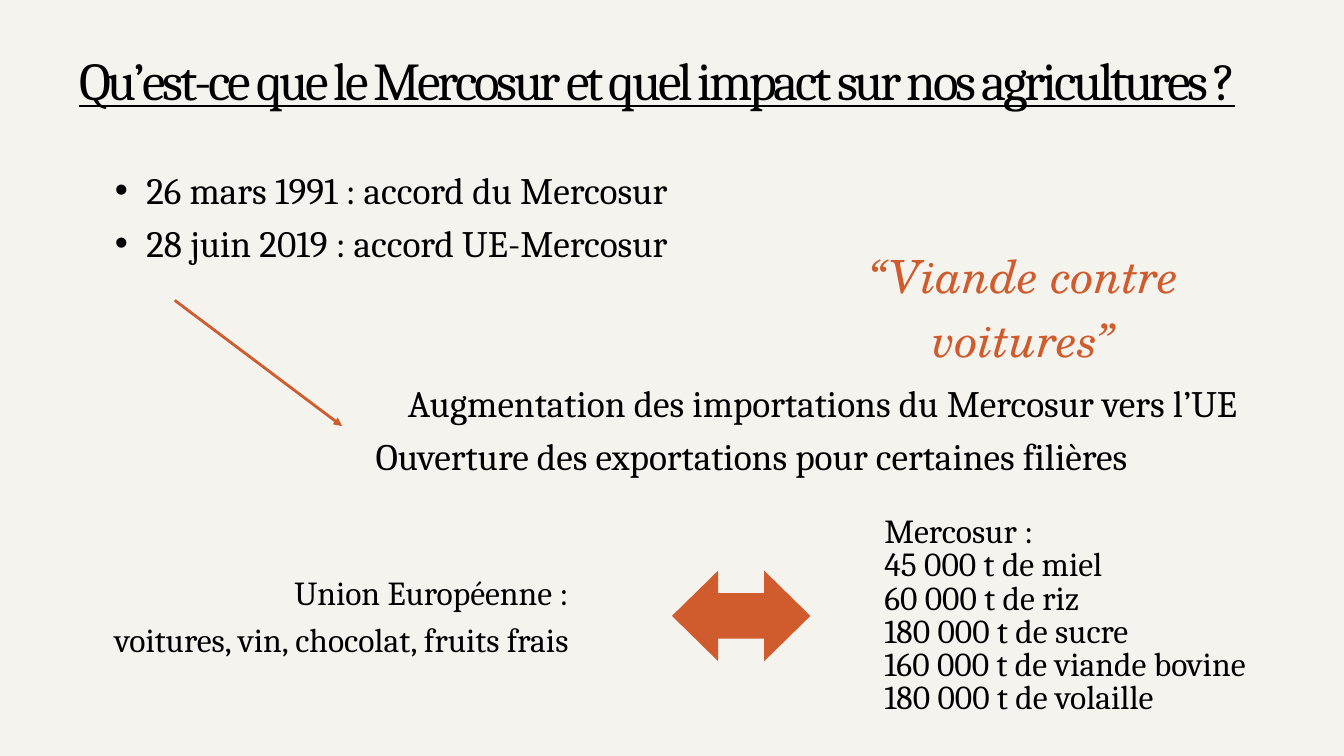
from lxml import etree
from pptx import Presentation
from pptx.dml.color import RGBColor
from pptx.enum.shapes import MSO_CONNECTOR, MSO_SHAPE
from pptx.enum.text import MSO_AUTO_SIZE, PP_ALIGN
from pptx.oxml.ns import qn
from pptx.util import Inches, Pt

WIDE, HIGH = Inches(20), Inches(11.25)
PAPER = RGBColor(0xF4, 0xF3, 0xEE)
RUST = RGBColor(0xD0, 0x5B, 0x2C)
BLACK = RGBColor(0, 0, 0)
LEFT, MID, RIGHT = PP_ALIGN.LEFT, PP_ALIGN.CENTER, PP_ALIGN.RIGHT
GROW = MSO_AUTO_SIZE.SHAPE_TO_FIT_TEXT
LINE = MSO_CONNECTOR.STRAIGHT
SWAP = MSO_SHAPE.LEFT_RIGHT_ARROW

BASE = {"name": "Cambria", "size": Pt(40)}
TITLE = {"name": "Cambria", "size": Pt(57), "underline": True}
QUOTE = {"name": "TeX Gyre Schola", "size": Pt(49), "italic": True}
SMALL = {"name": "Cambria", "size": Pt(36)}


def span(*shares):
    """Turn x, y pairs in percent of the slide into lengths."""
    return [int((HIGH if i % 2 else WIDE) * s / 100)
            for i, s in enumerate(shares)]


def add_mark(para):
    props = para._p.get_or_add_pPr()
    props.set("marL", str(Inches(0.94)))
    props.set("indent", str(Inches(-0.47)))
    etree.SubElement(props, qn("a:buFont")).set("typeface", "Arial")
    etree.SubElement(props, qn("a:buChar")).set("char", "•")


def add_text(slide, area, rows, form, color=BLACK, mark=False, track=0):
    """Write rows of (text, alignment, line height in points)."""
    frame = slide.shapes.add_textbox(*span(*area)).text_frame
    frame.word_wrap = True
    frame.auto_size = GROW
    for side in ("left", "top", "right", "bottom"):
        setattr(frame, f"margin_{side}", 0)
    for i, (text, align, pitch) in enumerate(rows):
        para = frame.add_paragraph() if i else frame.paragraphs[0]
        para.alignment = align
        para.line_spacing = Pt(pitch)
        if mark:
            add_mark(para)
        run = para.add_run()
        run.text = text
        for key, value in form.items():
            setattr(run.font, key, value)
        run.font.color.rgb = color
        if track:
            run._r.get_or_add_rPr().set("spc", str(track))


def add_arrow(slide, ends):
    arrow = slide.shapes.add_connector(LINE, *span(*ends))
    arrow.line.color.rgb = RUST
    arrow.line.width = Pt(3)
    tail = etree.SubElement(arrow.line._get_or_add_ln(), qn("a:tailEnd"))
    tail.set("type", "triangle")
    etree.SubElement(arrow._element.spPr, qn("a:effectLst"))


def add_swap(slide, area):
    swap = slide.shapes.add_shape(SWAP, *span(*area))
    swap.adjustments[0] = 0.5
    swap.adjustments[1] = 0.51
    swap.shadow.inherit = False
    swap.fill.solid()
    swap.fill.fore_color.rgb = RUST
    swap.line.fill.background()


def main():
    deck = Presentation()
    deck.slide_width, deck.slide_height = WIDE, HIGH
    slide = deck.slides.add_slide(deck.slide_layouts[6])
    slide.background.fill.solid()
    slide.background.fill.fore_color.rgb = PAPER

    add_arrow(slide, (13, 39.73, 25.45, 56.36))
    add_swap(slide, (50, 75.47, 10.3, 12))

    add_text(slide, (1.7, 4.89, 94.4, 9.33), [
        ("Qu’est-ce que le Mercosur et quel impact sur nos agricultures ?",
         MID, 79.8)], TITLE, track=-350)
    add_text(slide, (4.55, 21.16, 46.75, 13.33), [
        ("26 mars 1991 : accord du Mercosur", MID, 56),
        ("28 juin 2019 : accord UE-Mercosur", MID, 56)], BASE, mark=True)
    add_text(slide, (27.95, 49.33, 67.1, 13.33), [
        ("Augmentation des importations du Mercosur vers l’UE ", MID, 56),
        ("Ouverture des exportations pour certaines filières", LEFT, 56)],
        BASE)
    add_text(slide, (58.05, 31.56, 36.3, 8.18), [
        ("“Viande contre voitures”", MID, 68.6)], QUOTE, RUST)
    add_text(slide, (4.55, 74.76, 37.75, 12.18), [
        ("Union Européenne :", RIGHT, 50.4),
        ("voitures, vin, chocolat, fruits frais", RIGHT, 50.4)], SMALL)

    goods = ("45 000 t de miel", "60 000 t de riz", "180 000 t de sucre",
             "160 000 t de viande bovine", "180 000 t de volaille")
    add_text(slide, (65.8, 66.58, 28.55, 28.62),
             [("Mercosur :", LEFT, 50.4)] + [(g, LEFT, 35.6) for g in goods],
             SMALL)
    deck.save("out.pptx")


if __name__ == "__main__":
    main()
